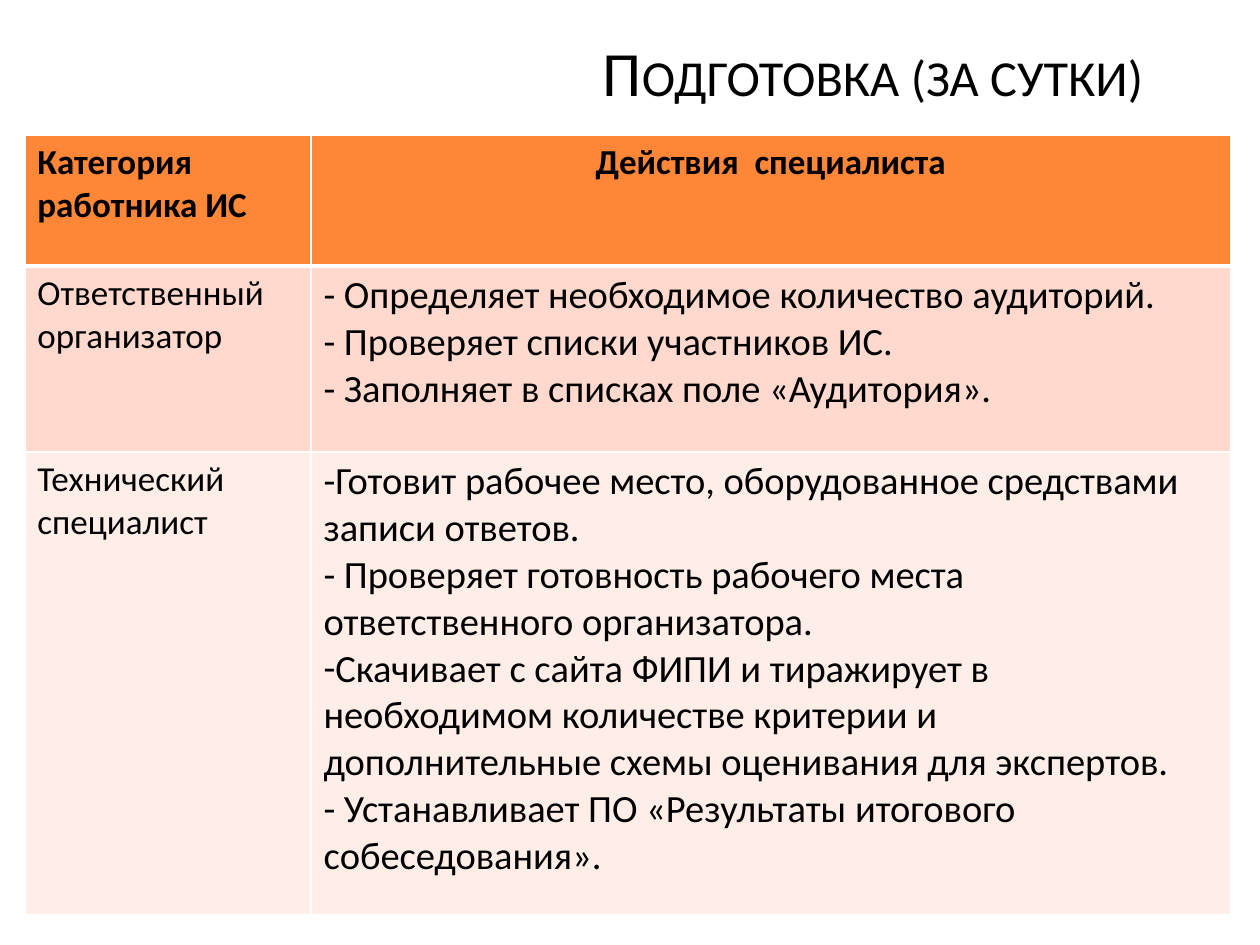
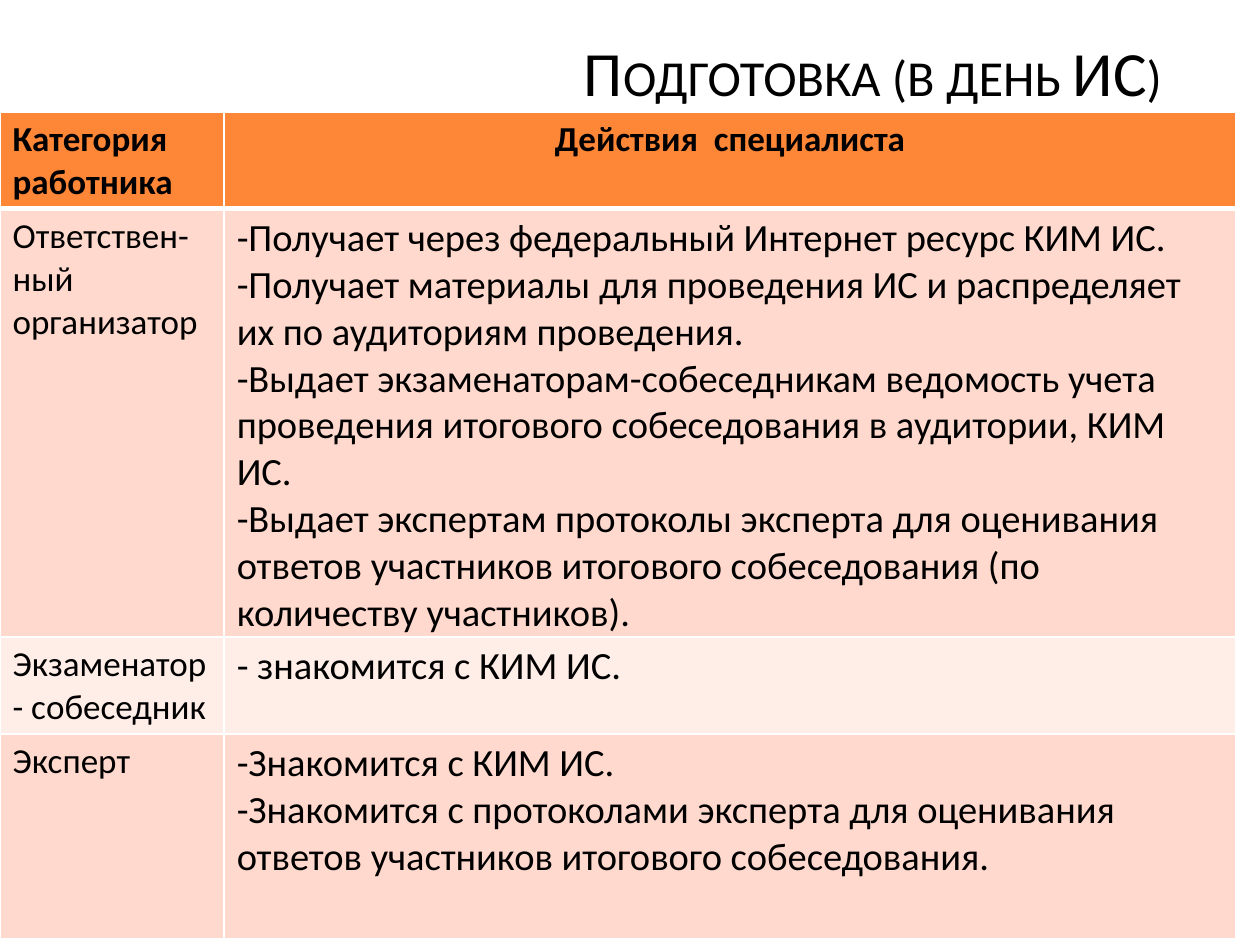
from dataclasses import dataclass

import lxml.etree
import pptx
import pptx.dml.color
import pptx.enum.text
import pptx.oxml.ns
import pptx.util

Cm = pptx.util.Cm
ALIGN = pptx.enum.text.PP_ALIGN
qn = pptx.oxml.ns.qn

FONT = "Calibri"
BLACK, WHITE = "000000", "FFFFFF"
HEADER_FILL = "FE8637"
BAND_FILLS = ("FFD9CE", "FFEDE8")
THIN, THICK = 1, 3
LABEL_SIZE, ACTION_SIZE = 20, 22


@dataclass
class Duty:
    worker: str
    actions: list[str]
    height: float
    bullet: str | None = "-"


@dataclass
class Stage:
    """One slide: a title and a table of duties; lengths in centimetres."""
    title: str
    worker_heading: str
    left: float
    top: float
    widths: tuple[float, float]
    header_height: float
    duties: list[Duty]


STAGES = [
    Stage("Подготовка (за сутки)", "Категория работника ИС", 0.5, 2.72, (5.77, 18.54), 2.64, [
        Duty("Ответственный организатор", [
            "- Определяет необходимое количество аудиторий.",
            "- Проверяет списки участников ИС.",
            "- Заполняет в списках поле «Аудитория».",
        ], 3.75, bullet=None),
        Duty("Технический специалист", [
            "Готовит рабочее место, оборудованное средствами записи ответов.",
            " Проверяет готовность рабочего места ответственного организатора.",
            "Скачивает с сайта ФИПИ и тиражирует в необходимом количестве критерии "
            "и дополнительные схемы оценивания для экспертов.",
            " Устанавливает ПО «Результаты итогового собеседования».",
        ], 9.34),
    ]),
    Stage("Подготовка (в день ИС)", "Категория работника", 0, 2.26, (4.52, 20.4), 1.88, [
        Duty("Ответствен-ный организатор", [
            "Получает через федеральный Интернет ресурс КИМ ИС.",
            "Получает материалы для проведения ИС и распределяет их по аудиториям проведения.",
            "Выдает экзаменаторам-собеседникам ведомость учета проведения "
            "итогового собеседования в аудитории, КИМ ИС.",
            "Выдает экспертам протоколы эксперта для оценивания ответов участников "
            "итогового собеседования (по количеству участников).",
        ], 8.36),
        Duty("Экзаменатор - собеседник", [" знакомится с КИМ ИС."], 1.88),
        Duty("Эксперт", [
            "Знакомится с КИМ ИС.",
            "Знакомится с протоколами эксперта для оценивания ответов участников "
            "итогового собеседования.",
        ], 4.14),
    ]),
]


def rgb(color: str) -> pptx.dml.color.RGBColor:
    return pptx.dml.color.RGBColor.from_string(color)


def write(tf, lines: list[str], *, size: float, bold: bool = False, align=ALIGN.LEFT,
          bullet: str | None = None, small_caps: bool = False) -> None:
    for i, line in enumerate(lines):
        p = tf.paragraphs[0] if i == 0 else tf.add_paragraph()
        p.alignment = align
        if bullet:
            props = p._p.get_or_add_pPr()
            props.set("marL", "0")
            props.set("indent", "0")
            lxml.etree.SubElement(props, qn("a:buFont"), typeface=FONT)
            lxml.etree.SubElement(props, qn("a:buChar"), char=bullet)
        r = p.add_run()
        r.text = line
        r.font.name = FONT
        r.font.size = pptx.util.Pt(size)
        r.font.bold = bold
        r.font.color.rgb = rgb(BLACK)
        if small_caps:
            r._r.get_or_add_rPr().set("cap", "small")


def style_cell(cell, fill: str, top: float, bottom: float) -> None:
    """Fill a cell and give it white borders, widths in points."""
    props = cell._tc.get_or_add_tcPr()
    for side, width in (("L", THIN), ("R", THIN), ("T", top), ("B", bottom)):
        ln = lxml.etree.SubElement(props, qn(f"a:ln{side}"), w=str(pptx.util.Pt(width)))
        solid = lxml.etree.SubElement(ln, qn("a:solidFill"))
        lxml.etree.SubElement(solid, qn("a:srgbClr"), val=WHITE)
    cell.fill.solid()
    cell.fill.fore_color.rgb = rgb(fill)


def add_title(s, title: str) -> None:
    tf = s.shapes.add_textbox(Cm(11.1), Cm(0.53), Cm(13), Cm(1.8)).text_frame
    tf.word_wrap = True
    tf.vertical_anchor = pptx.enum.text.MSO_ANCHOR.BOTTOM
    write(tf, [title], size=36, align=ALIGN.CENTER, small_caps=True)


def add_duties(s, stage: Stage) -> None:
    heights = [stage.header_height] + [duty.height for duty in stage.duties]
    table = s.shapes.add_table(len(heights), 2, Cm(stage.left), Cm(stage.top),
                               Cm(sum(stage.widths)), Cm(sum(heights))).table
    for column, width in zip(table.columns, stage.widths):
        column.width = Cm(width)
    for row, height in zip(table.rows, heights):
        row.height = Cm(height)

    worker, actions = table.rows[0].cells
    write(worker.text_frame, [stage.worker_heading], size=LABEL_SIZE, bold=True)
    write(actions.text_frame, ["Действия  специалиста"], size=LABEL_SIZE, bold=True,
          align=ALIGN.CENTER)
    for cell in (worker, actions):
        style_cell(cell, HEADER_FILL, THIN, THICK)

    for i, duty in enumerate(stage.duties):
        worker, actions = table.rows[i + 1].cells
        write(worker.text_frame, [duty.worker], size=LABEL_SIZE)
        write(actions.text_frame, duty.actions, size=ACTION_SIZE, bullet=duty.bullet)
        for cell in (worker, actions):
            style_cell(cell, BAND_FILLS[i % 2], THICK if i == 0 else THIN, THIN)


def main() -> None:
    prs = pptx.Presentation()
    prs.slide_width, prs.slide_height = Cm(25.4), Cm(19.05)
    for stage in STAGES:
        s = prs.slides.add_slide(prs.slide_layouts[6])
        add_title(s, stage.title)
        add_duties(s, stage)
    prs.save("out.pptx")


if __name__ == "__main__":
    main()
